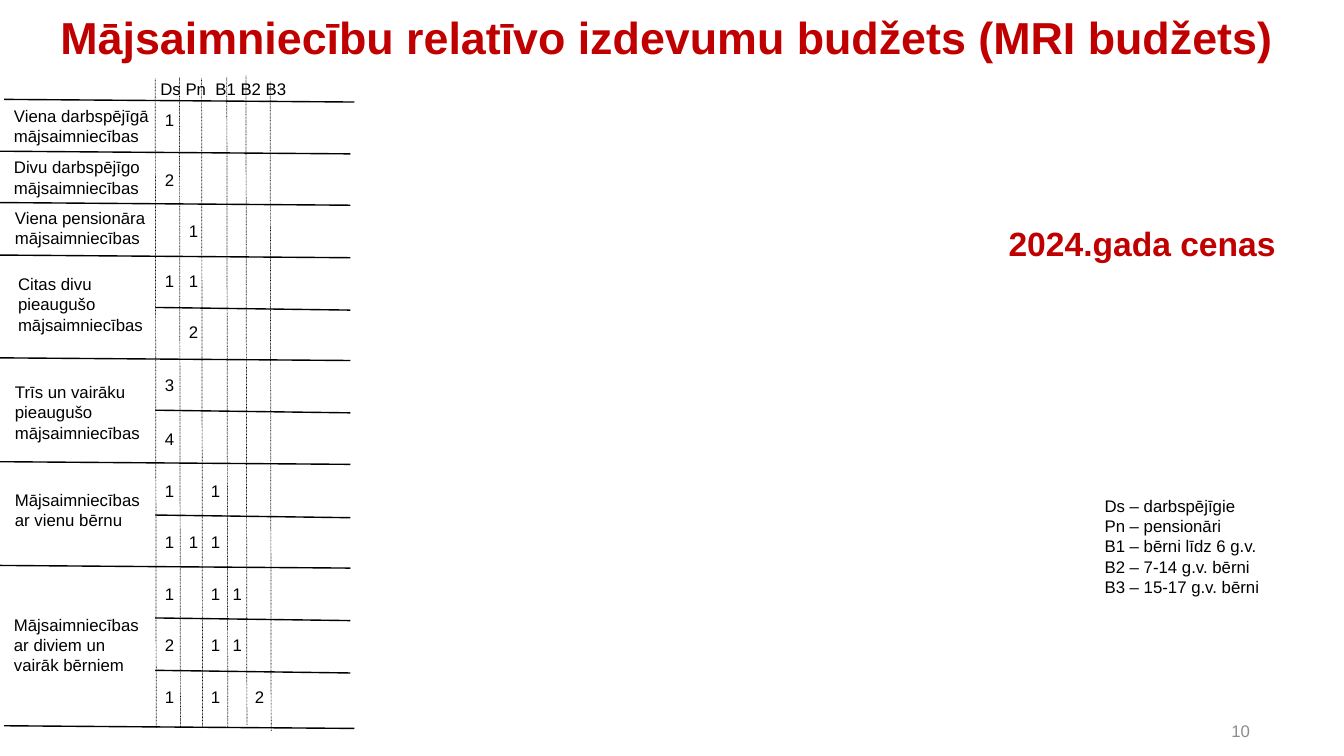
from lxml.etree import SubElement
from pptx import Presentation
from pptx.dml.color import RGBColor
from pptx.enum.dml import MSO_LINE
from pptx.enum.shapes import MSO_CONNECTOR
from pptx.enum.text import MSO_ANCHOR, MSO_AUTO_SIZE, PP_ALIGN
from pptx.oxml.ns import qn
from pptx.util import Pt

COLORS = {"accent": "C00000", "ink": "000000", "muted": "8C8C8C"}
FONT = "Arial"

TITLE = "Mājsaimniecību relatīvo izdevumu budžets (MRI budžets)"
PRICES = "2024.gada cenas"
PAGE_NUMBER = "10"
HEADER = "Ds Pn  B1 B2 B3"
LEGEND = [
    "Ds – darbspējīgie",
    "Pn – pensionāri",
    "B1 – bērni līdz 6 g.v.",
    "B2 – 7-14 g.v. bērni",
    "B3 – 15-17 g.v. bērni",
]

# left, top, height, paragraphs
GROUPS = [
    (2.9, 72, 36, ["Viena darbspējīgā mājsaimniecības"]),
    (2.9, 108.7, 36, ["Divu darbspējīgo mājsaimniecības"]),
    (3.6, 144.7, 36, ["Viena pensionāra mājsaimniecības"]),
    (5.8, 192.2, 51, ["Citas divu", "pieaugušo mājsaimniecības"]),
    (3.6, 269.3, 51, ["Trīs un vairāku", "pieaugušo mājsaimniecības"]),
    (3.6, 346.3, 36, ["Mājsaimniecības", "ar vienu bērnu"]),
    (2.9, 435.6, 51, ["Mājsaimniecības", "ar diviem un", "vairāk bērniem"]),
]

# top of the counts, members of each kind
HOUSEHOLDS = [
    (74.9, {"Ds": "1"}),
    (117.4, {"Ds": "2"}),
    (154.1, {"Pn": "1"}),
    (190.1, {"Ds": "1", "Pn": "1"}),
    (226.1, {"Pn": "2"}),
    (264.2, {"Ds": "3"}),
    (302.4, {"Ds": "4"}),
    (339.8, {"Ds": "1", "B1": "1"}),
    (376.2, {"Ds": "1", "Pn": "1", "B1": "1"}),
    (413.3, {"Ds": "1", "B1": "1", "B2": "1"}),
    (449.8, {"Ds": "2", "B1": "1", "B2": "1"}),
    (486.7, {"Ds": "1", "B1": "1", "B3": "2"}),
]
COUNT_LEFT = {"Ds": 110.7, "Pn": 127.8, "B1": 143.6, "B2": 159.1, "B3": 175}

# rule positions at their left ends
OUTER_RULES = [71, 518.4]
GROUP_RULES = [108, 144.7, 182.2, 255.6, 329.8, 403.9]
HOUSEHOLD_RULES = [219.6, 293, 367.9, 441.4, 478.8]
# left, top of each column divider
DIVIDERS = [(110.9, 56.2), (128.2, 55.4), (144, 56.2),
            (162, 55.4), (175.7, 54), (193, 58.3)]
RULE_RIGHT = 250.2
OUTER_SHIFT = 2.9
RULE_DROP = 1.9
DIVIDER_LENGTH = 464
DIVIDER_LEAN = 0.7


def add_text(page, lines, left, top, width, height, size=12, color="ink",
             bold=False, align=PP_ALIGN.LEFT, anchor=MSO_ANCHOR.TOP,
             wrap=True, grow=True, spacing=None):
    box = page.shapes.add_textbox(Pt(left), Pt(top), Pt(width), Pt(height))
    frame = box.text_frame
    frame.word_wrap = wrap
    frame.vertical_anchor = anchor
    frame.auto_size = MSO_AUTO_SIZE.SHAPE_TO_FIT_TEXT if grow else MSO_AUTO_SIZE.NONE
    frame.text = "\n".join(lines)
    for para in frame.paragraphs:
        para.alignment = align
        para.line_spacing = spacing
        para.font.name = FONT
        para.font.size = Pt(size)
        para.font.bold = bold
        para.font.color.rgb = RGBColor.from_string(COLORS[color])


def add_line(page, start_x, start_y, end_x, end_y, weight=1, dash=None):
    line = page.shapes.add_connector(
        MSO_CONNECTOR.STRAIGHT, Pt(start_x), Pt(start_y), Pt(end_x), Pt(end_y))
    line.line.color.rgb = RGBColor.from_string(COLORS["ink"])
    line.line.width = Pt(weight)
    if dash is not None:
        line.line.dash_style = dash
    SubElement(line._element.spPr, qn("a:effectLst"))


def add_rules(page, tops, left, right):
    for top in tops:
        add_line(page, left, top, right, top + RULE_DROP)


def main():
    deck = Presentation()
    deck.slide_width, deck.slide_height = Pt(960), Pt(540)
    page = deck.slides.add_slide(deck.slide_layouts[6])

    add_text(page, [TITLE], 0, 0, 953.3, 56.9, size=32, color="accent", bold=True,
             align=PP_ALIGN.CENTER, anchor=MSO_ANCHOR.MIDDLE, grow=False, spacing=0.9)
    add_text(page, [PAGE_NUMBER], 684, 507.6, 216, 28.8, color="muted",
             align=PP_ALIGN.RIGHT, anchor=MSO_ANCHOR.MIDDLE, grow=False)

    add_rules(page, OUTER_RULES, OUTER_SHIFT, RULE_RIGHT + OUTER_SHIFT)
    add_rules(page, GROUP_RULES, 0, RULE_RIGHT)
    add_rules(page, HOUSEHOLD_RULES, DIVIDERS[0][0], RULE_RIGHT)

    for left, top, height, lines in GROUPS:
        add_text(page, lines, left, top, 134.6, height)
    add_text(page, [HEADER], 107.5, 52.6, 105.1, 21.6, wrap=False)

    for left, top in DIVIDERS:
        add_line(page, left, top, left + DIVIDER_LEAN, top + DIVIDER_LENGTH,
                 weight=0.5, dash=MSO_LINE.ROUND_DOT)

    for top, members in HOUSEHOLDS:
        for kind, count in members.items():
            add_text(page, [count], COUNT_LEFT[kind], top, 20.9, 21.6, wrap=False)

    add_text(page, [PRICES], 704.9, 148.3, 221.8, 43.9, size=24, color="accent",
             bold=True, align=PP_ALIGN.CENTER, anchor=MSO_ANCHOR.BOTTOM,
             grow=False, spacing=0.9)
    add_text(page, LEGEND, 781.9, 350.6, 128.2, 79.9)

    deck.save("out.pptx")


if __name__ == "__main__":
    main()
